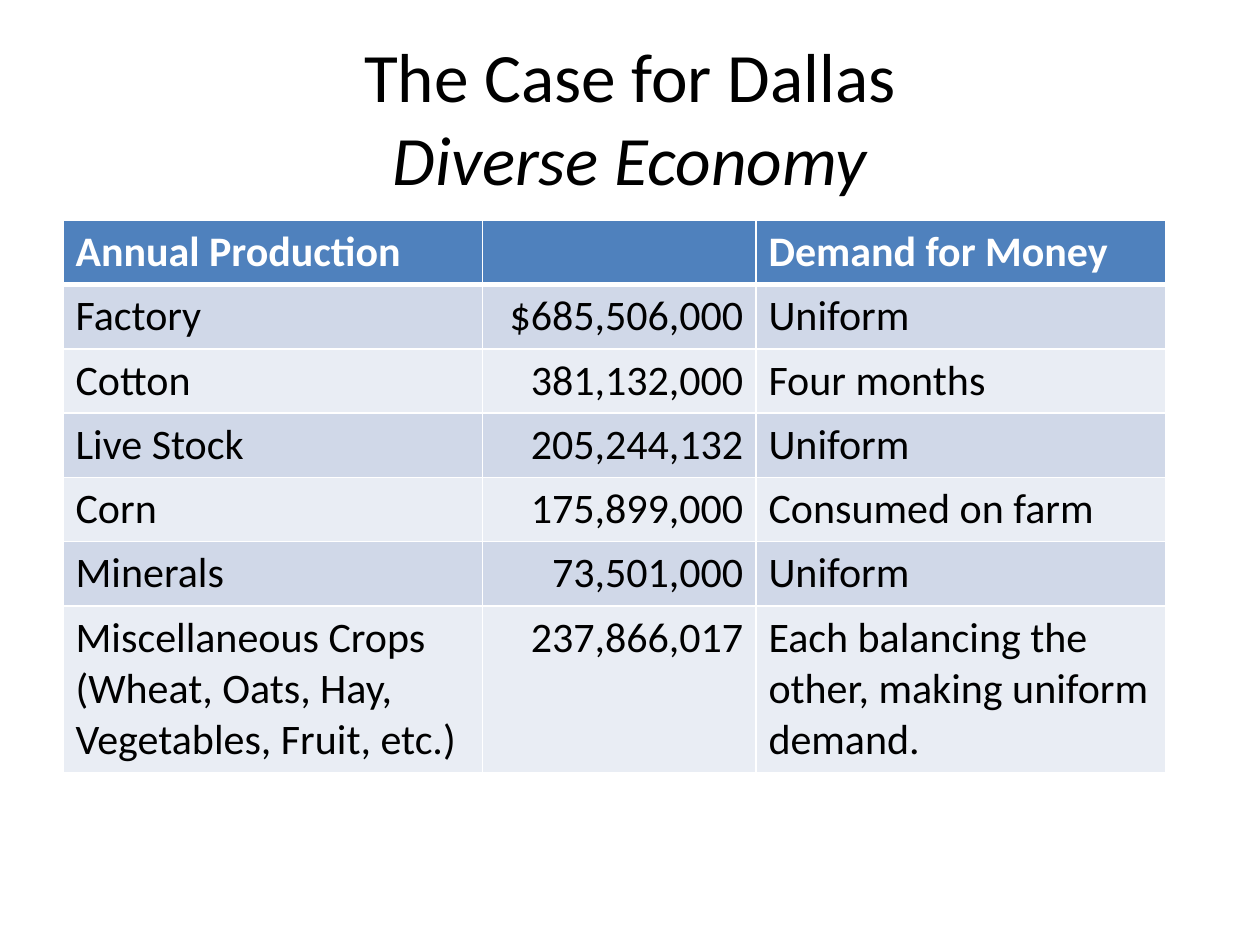
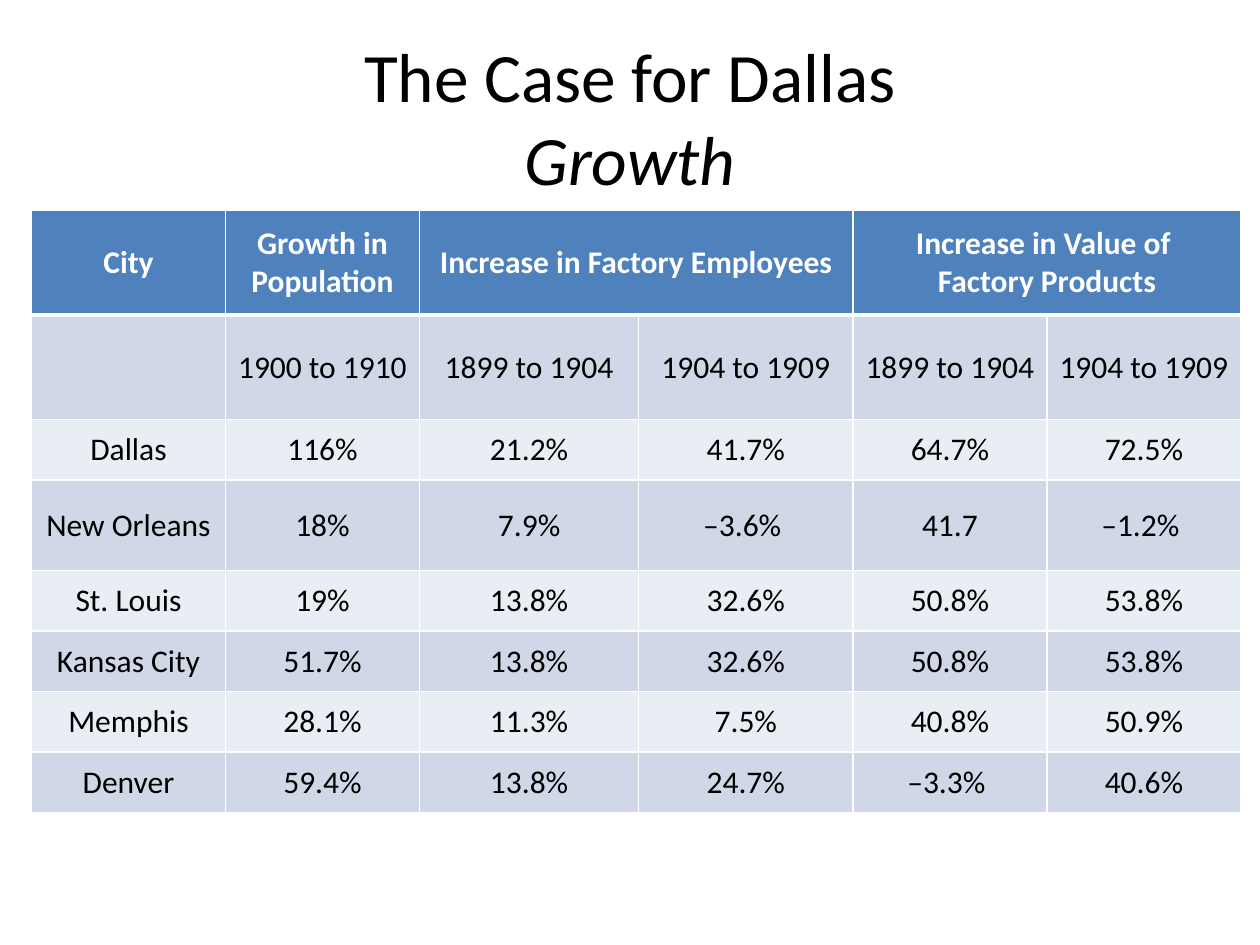
"""Build two slides of tables that make the case for Dallas."""
import lxml.etree
import pptx
import pptx.dml.color
import pptx.enum.text
import pptx.oxml.ns
import pptx.util

ALIGN = pptx.enum.text.PP_ALIGN
ANCHOR = pptx.enum.text.MSO_ANCHOR
FONT = "Calibri"
WHITE, BLACK, HEADER = "FFFFFF", "000000", "4F81BD"
BANDS = ("E9EDF4", "D0D8E8")
TITLE = "The Case for Dallas"

SLIDES = [
    {
        "subtitle": "Diverse Economy",
        "corner": (0.5, 1.75),
        "columns": [3.33, 2.17, 3.25],
        "heights": [0.51] * 6 + [1.3],
        "size": 24,
        "aligns": [ALIGN.LEFT, ALIGN.RIGHT, ALIGN.LEFT],
        "anchor": ANCHOR.TOP,
        "rows": [
            ("Annual Production", "", "Demand for Money"),
            ("Factory", "$685,506,000", "Uniform"),
            ("Cotton", "381,132,000", "Four months"),
            ("Live Stock", "205,244,132", "Uniform"),
            ("Corn", "175,899,000", "Consumed on farm"),
            ("Minerals", "73,501,000", "Uniform"),
            ("Miscellaneous Crops\n(Wheat, Oats, Hay, Vegetables, Fruit, etc.)",
             "237,866,017", "Each balancing the other, making uniform demand."),
        ],
    },
    {
        "subtitle": "Growth",
        "corner": (0.25, 1.67),
        "columns": [1.54, 1.54, 1.74, 1.7, 1.54, 1.54],
        "heights": [0.83, 0.83, 0.48, 0.72] + [0.48] * 4,
        "size": 18,
        "aligns": [ALIGN.CENTER] * 6,
        "anchor": ANCHOR.MIDDLE,
        "rows": [
            ("City", "Growth in Population", "Increase in Factory Employees", None,
             "Increase in Value of \nFactory Products", None),
            ("", "1900 to 1910", "1899 to 1904", "1904 to 1909", "1899 to 1904", "1904 to 1909"),
            ("Dallas", "116%", "21.2%", "41.7%", "64.7%", "72.5%"),
            ("New Orleans", "18%", "7.9%", "–3.6% ", "41.7", "–1.2% "),
            ("St. Louis", "19%", "13.8%", "32.6%", "50.8%", "53.8%"),
            ("Kansas City", "51.7%", "13.8%", "32.6%", "50.8%", "53.8%"),
            ("Memphis", "28.1%", "11.3%", "7.5%", "40.8%", "50.9%"),
            ("Denver", "59.4%", "13.8%", "24.7%", "–3.3% ", "40.6%"),
        ],
    },
]


def color(value):
    return pptx.dml.color.RGBColor.from_string(value)


def set_font(paragraph, size, value, bold=False):
    paragraph.font.name = FONT
    paragraph.font.size = pptx.util.Pt(size)
    paragraph.font.bold = bold
    paragraph.font.color.rgb = color(value)


def add_title(slide, subtitle):
    title = slide.shapes.title
    title.left, title.top, title.width, title.height = map(pptx.util.Inches, (0.5, 0.3, 9, 1.25))
    frame = title.text_frame
    frame.auto_size = pptx.enum.text.MSO_AUTO_SIZE.NONE
    frame.vertical_anchor = ANCHOR.MIDDLE
    paragraph = frame.paragraphs[0]
    paragraph.alignment = ALIGN.CENTER
    set_font(paragraph, 39.6, BLACK)
    paragraph.add_run().text = TITLE
    paragraph.add_line_break()
    run = paragraph.add_run()
    run.text = subtitle
    run.font.italic = True


def set_borders(cell, row):
    properties = cell._tc.get_or_add_tcPr()
    widths = {"lnL": 1, "lnR": 1, "lnT": 3 if row == 1 else 1, "lnB": 3 if row == 0 else 1}
    for position, (side, width) in enumerate(widths.items()):
        line = lxml.etree.Element(pptx.oxml.ns.qn(f"a:{side}"), w=str(pptx.util.Pt(width)))
        fill = lxml.etree.SubElement(line, pptx.oxml.ns.qn("a:solidFill"))
        lxml.etree.SubElement(fill, pptx.oxml.ns.qn("a:srgbClr"), val=WHITE)
        properties.insert(position, line)


def add_table(slide, content):
    rows, columns, heights = content["rows"], content["columns"], content["heights"]
    left, top, width, height = map(
        pptx.util.Inches, (*content["corner"], sum(columns), sum(heights)))
    table = slide.shapes.add_table(len(rows), len(columns), left, top, width, height).table
    for column, length in zip(table.columns, columns):
        column.width = pptx.util.Inches(length)
    for row, length in zip(table.rows, heights):
        row.height = pptx.util.Inches(length)
    for row, texts in enumerate(rows):
        for column, text in enumerate(texts):
            cell = table.cell(row, column)
            cell.fill.solid()
            cell.fill.fore_color.rgb = color(BANDS[row % 2] if row else HEADER)
            set_borders(cell, row)
            if text is None:
                table.cell(row, column - 1).merge(cell)
                continue
            cell.vertical_anchor = content["anchor"]
            cell.text_frame.text = text
            for paragraph in cell.text_frame.paragraphs:
                paragraph.alignment = content["aligns"][column]
                set_font(paragraph, content["size"], BLACK if row else WHITE, row == 0)


def main():
    presentation = pptx.Presentation()
    presentation.slide_width = pptx.util.Inches(10)
    presentation.slide_height = pptx.util.Inches(7.5)
    for content in SLIDES:
        slide = presentation.slides.add_slide(presentation.slide_layouts[5])
        add_title(slide, content["subtitle"])
        add_table(slide, content)
    presentation.save("out.pptx")


if __name__ == "__main__":
    main()
